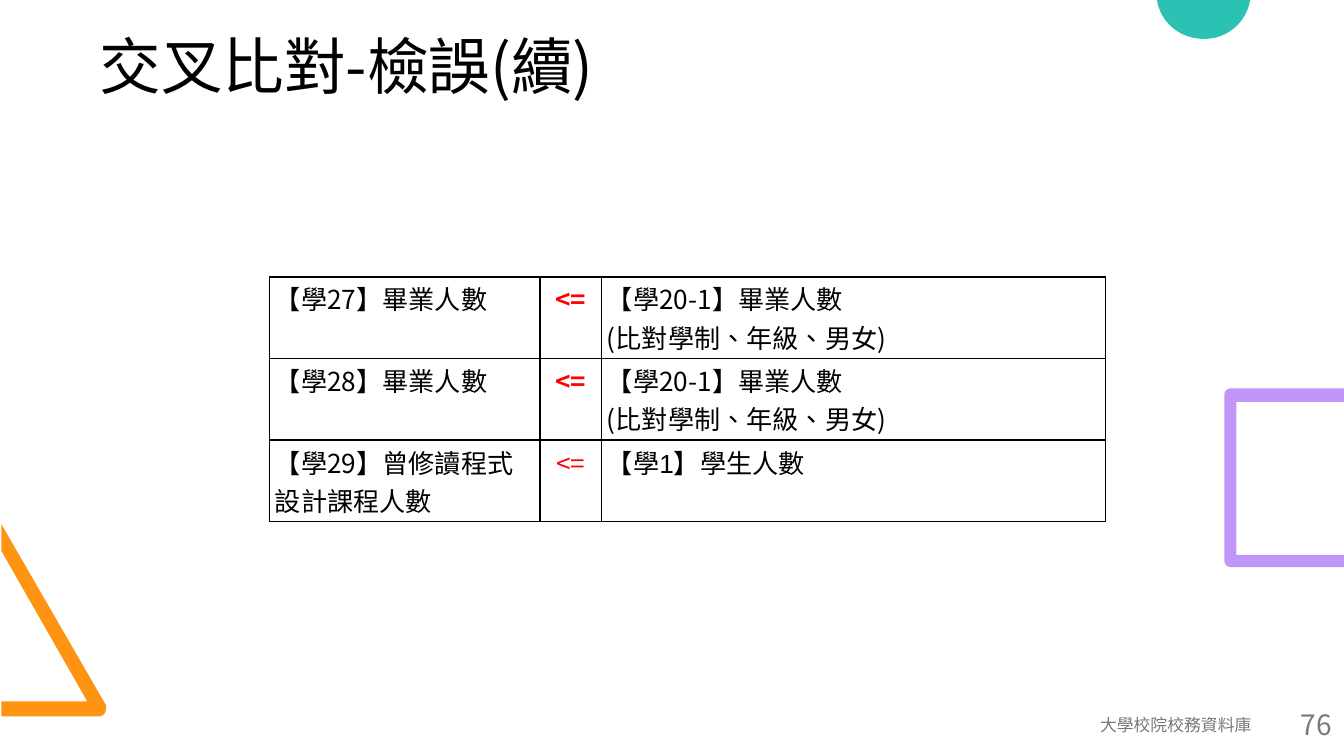
from dataclasses import dataclass

from lxml import etree
from pptx import Presentation
from pptx import util as u
from pptx.dml.color import RGBColor
from pptx.enum import text
from pptx.oxml import ns


@dataclass(frozen=True)
class Theme:
    font: str = "Noto Sans CJK TC"
    plain_font: str = "Arial"
    language: str = "zh-TW"
    ink: str = "000000"
    alert: str = "FF0000"
    muted: str = "797979"
    orange: str = "FF9413"
    teal: str = "2BC2B4"
    purple: str = "C097F8"
    title_size: float = 33
    table_size: float = 14
    footer_size: float = 9
    number_size: float = 15
    rule_width: float = 1


THEME = Theme()


def write(frame, content, *, size, color=THEME.ink, font=THEME.font, bold=False,
          align="LEFT", spacing=None):
    for index, line in enumerate(content.split("\n")):
        paragraph = frame.paragraphs[0] if index == 0 else frame.add_paragraph()
        paragraph.alignment = getattr(text.PP_ALIGN, align)
        paragraph.line_spacing = spacing
        run = paragraph.add_run()
        run.text = line
        run.font.size = u.Pt(size)
        run.font.bold = bold
        run.font.color.rgb = RGBColor.from_string(color)
        run.font.name = font
        properties = run.font._element
        properties.set("lang", THEME.language)
        etree.SubElement(properties, ns.qn("a:ea")).set("typeface", THEME.font)


def bezier(start, curve, steps=12):
    points = [start, curve[:2], curve[2:4], curve[4:]]
    weights = (1, 3, 3, 1)
    for step in range(1, steps + 1):
        t = step / steps
        yield tuple(
            sum(w * (1 - t) ** (3 - i) * t ** i * point[axis]
                for i, (w, point) in enumerate(zip(weights, points)))
            for axis in (0, 1))


class Deck:
    COLUMNS, ROWS = 100, 56.25

    def __init__(self, theme):
        self.theme = theme
        self.show = Presentation()
        self.show.slide_width = u.Inches(10)
        self.show.slide_height = self.show.slide_width * 9 // 16
        self.slide = self.show.slides.add_slide(self.show.slide_layouts[5])

    def x(self, columns):
        return round(self.show.slide_width * columns / self.COLUMNS)

    def y(self, rows):
        return round(self.show.slide_height * rows / self.ROWS)

    def box(self, left, top, width, height):
        return self.x(left), self.y(top), self.x(width), self.y(height)

    def outline(self, color, start, *steps):
        points = [start]
        for step in steps:
            points.extend([step] if len(step) == 2 else bezier(points[-1], step))
        corners = [(self.x(column), self.y(row)) for column, row in points]
        builder = self.slide.shapes.build_freeform(*corners[0])
        builder.add_line_segments(corners[1:], close=True)
        decoration = builder.convert_to_shape()
        decoration.shadow.inherit = False
        decoration.fill.solid()
        decoration.fill.fore_color.rgb = RGBColor.from_string(color)
        decoration.line.fill.background()

    def title(self, content, *place):
        heading = self.slide.shapes.title
        heading.left, heading.top, heading.width, heading.height = self.box(*place)
        frame = heading.text_frame
        frame.auto_size = text.MSO_AUTO_SIZE.NONE
        frame.vertical_anchor = text.MSO_ANCHOR.TOP
        frame.margin_left = frame.margin_right = u.Inches(0.05)
        frame.margin_top = frame.margin_bottom = u.Inches(0.02)
        write(frame, content, size=self.theme.title_size, spacing=0.9)

    def label(self, content, place, size):
        frame = self.slide.shapes.add_textbox(*self.box(*place)).text_frame
        frame.word_wrap = True
        frame.vertical_anchor = text.MSO_ANCHOR.MIDDLE
        frame.margin_left = frame.margin_right = u.Inches(0.09)
        frame.margin_top = frame.margin_bottom = u.Inches(0.04)
        write(frame, content, size=size, color=self.theme.muted, align="RIGHT")

    def border(self, cell):
        properties = cell._tc.get_or_add_tcPr()
        for index, side in enumerate(("lnL", "lnR", "lnT", "lnB")):
            rule = etree.Element(ns.qn(f"a:{side}"))
            rule.set("w", str(u.Pt(self.theme.rule_width)))
            fill = etree.SubElement(rule, ns.qn("a:solidFill"))
            etree.SubElement(fill, ns.qn("a:srgbClr")).set("val", self.theme.ink)
            properties.insert(index, rule)

    def table(self, left, top, widths, row_height, records):
        place = self.box(left, top, sum(widths), row_height * len(records))
        grid = self.slide.shapes.add_table(len(records), len(widths), *place).table
        grid.first_row = grid.horz_banding = False
        for column, width in zip(grid.columns, widths):
            column.width = self.x(width)
        for row, record in zip(grid.rows, records):
            row.height = self.y(row_height)
            for cell, (content, style) in zip(row.cells, record):
                cell.fill.background()
                cell.margin_left = cell.margin_right = u.Inches(0.04)
                cell.margin_top = cell.margin_bottom = u.Inches(0.02)
                self.border(cell)
                write(cell.text_frame, content, size=self.theme.table_size, **style)


def main():
    deck = Deck(THEME)
    deck.outline(THEME.orange, (0.1, 53.3), (0.1, 52.2), (6.5, 52.2), (0.1, 41),
                 (0.1, 39), (7.9, 52.5), (7.9, 52.6, 7.9, 52.7, 7.9, 52.7),
                 (7.9, 53, 7.7, 53.3, 7.4, 53.3))
    deck.outline(THEME.teal, (86.1, 0), (93, 0), (93, 0.1),
                 (92.7, 1.7, 91.3, 2.9, 89.6, 2.9),
                 (87.8, 2.9, 86.4, 1.7, 86.1, 0.1))
    deck.outline(THEME.purple, (91.6, 42.2), (100, 42.2), (100, 41.3), (92, 41.3),
                 (92, 29.9), (100, 29.9), (100, 28.9), (91.6, 28.9),
                 (91.3, 28.9, 91.1, 29.1, 91.1, 29.4), (91.1, 41.7),
                 (91.1, 42, 91.3, 42.2, 91.6, 42.2))
    deck.title("交叉比對-檢誤(續)", 6.9, 2.5, 86.2, 12.1)

    graduates = "【學20-1】畢業人數\n(比對學制、年級、男女)"
    checks = [
        ("【學27】畢業人數", True, graduates, THEME.font),
        ("【學28】畢業人數", True, graduates, THEME.font),
        ("【學29】曾修讀程式設計課程人數", False, "【學1】學生人數",
         THEME.plain_font),
    ]
    records = [
        [(checked, {}),
         ("<=", dict(color=THEME.alert, bold=strong, align="CENTER")),
         (reference, dict(font=font))]
        for checked, strong, reference, font in checks
    ]
    deck.table(20.06, 20.6, (20.1, 4.6, 37.5), 5.13, records)
    deck.label("大學校院校務資料庫", (51.5, 52.4, 42.5, 3), THEME.footer_size)
    deck.label("76", (95, 52.4, 5, 3), THEME.number_size)
    deck.show.save("out.pptx")


if __name__ == "__main__":
    main()
